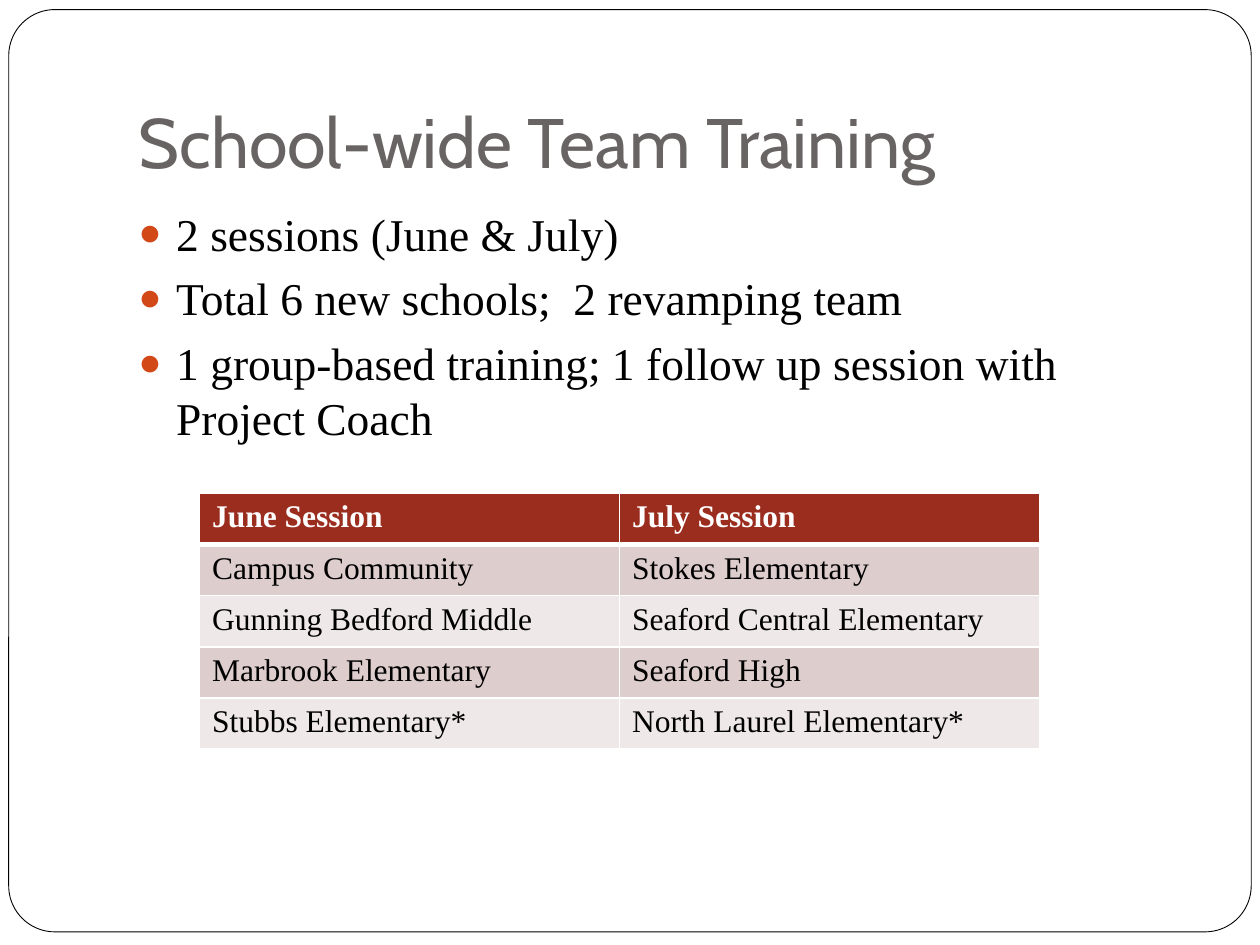
import pptx
import pptx.util
import pptx.dml.color
import pptx.enum.shapes
import pptx.enum.text
import pptx.oxml.ns
from lxml import etree

Pt = pptx.util.Pt
qn = pptx.oxml.ns.qn

BODY_FONT = "Times New Roman"
BULLETS = [
    "2 sessions (June & July)",
    "Total 6 new schools;  2 revamping team",
    "1 group-based training; 1 follow up session with Project Coach",
]
SESSIONS = [
    ("June Session", "July Session"),
    ("Campus Community", "Stokes Elementary"),
    ("Gunning Bedford Middle", "Seaford Central Elementary"),
    ("Marbrook Elementary", "Seaford High"),
    ("Stubbs Elementary*", "North Laurel Elementary*"),
]


def colour(value):
    return pptx.dml.color.RGBColor.from_string(value)


def format_para(para, font, size, ink, bold=False):
    for span in para.runs:
        span.font.name = font
        span.font.size = Pt(size)
        span.font.bold = bold
        span.font.color.rgb = colour(ink)


def place(shape, box):
    shape.left, shape.top, shape.width, shape.height = map(Pt, box)


def add_frame(page, box):
    frame = page.shapes.add_shape(
        pptx.enum.shapes.MSO_SHAPE.ROUNDED_RECTANGLE, *map(Pt, box))
    frame.adjustments[0] = 0.05
    frame.shadow.inherit = False
    frame.fill.solid()
    frame.fill.fore_color.rgb = colour("FFFFFF")
    frame.line.color.rgb = colour("000000")
    frame.line.width = Pt(0.5)
    page.shapes.title._element.addprevious(frame._element)  # behind the title


def set_title(page, box, text):
    title = page.shapes.title
    place(title, box)
    frame = title.text_frame
    frame.text = text
    frame.word_wrap = True
    frame.auto_size = pptx.enum.text.MSO_AUTO_SIZE.NONE
    frame.vertical_anchor = pptx.enum.text.MSO_ANCHOR.BOTTOM
    frame.margin_bottom = Pt(7.2)
    para = frame.paragraphs[0]
    para.alignment = pptx.enum.text.PP_ALIGN.LEFT
    format_para(para, "Cabin", 40, "696464")


def add_bullet(para, indent):
    props = para._p.get_or_add_pPr()
    props.set("marL", str(Pt(indent)))
    props.set("indent", str(-Pt(indent)))
    tint = etree.SubElement(props, qn("a:buClr"))
    etree.SubElement(tint, qn("a:srgbClr"), val="D34817")
    etree.SubElement(props, qn("a:buSzPct"), val="85000")
    etree.SubElement(props, qn("a:buFont"), typeface=BODY_FONT)
    etree.SubElement(props, qn("a:buChar"), char="●")


def add_bullets(page, box, lines):
    frame = page.shapes.add_textbox(*map(Pt, box)).text_frame
    frame.word_wrap = True
    frame.text = "\n".join(lines)
    for para in frame.paragraphs:
        para.space_before = Pt(5.8)
        add_bullet(para, 21.6)
        format_para(para, BODY_FONT, 26, "000000")


def set_borders(cell, bottom):
    props = cell._tc.get_or_add_tcPr()
    for side, width in (("L", 1), ("R", 1), ("T", 1), ("B", bottom)):
        line = etree.SubElement(props, qn(f"a:ln{side}"), w=str(Pt(width)))
        fill = etree.SubElement(line, qn("a:solidFill"))
        etree.SubElement(fill, qn("a:srgbClr"), val="FFFFFF")


def add_sessions(page, box, rows):
    table = page.shapes.add_table(len(rows), len(rows[0]), *map(Pt, box)).table
    for r, row in enumerate(rows):
        header = r == 0
        fill = "9B2D1F" if header else ("EFE8E8", "DECDCD")[r % 2]
        for c, text in enumerate(row):
            cell = table.cell(r, c)
            # The line under the header is shared with the first body row.
            set_borders(cell, 3 if header else 1)
            if r == 1:
                cell._tc.tcPr.find(qn("a:lnT")).set("w", str(Pt(3)))
            cell.fill.solid()
            cell.fill.fore_color.rgb = colour(fill)
            cell.text = text
            format_para(cell.text_frame.paragraphs[0], BODY_FONT, 18,
                        "FFFFFF" if header else "000000", header)


def main():
    deck = pptx.Presentation()
    deck.slide_width, deck.slide_height = Pt(720), Pt(540)
    page = deck.slides.add_slide(deck.slide_layouts.get_by_name("Title Only"))
    add_frame(page, (5, 5.5, 710, 527))
    set_title(page, (72, 21.6, 612, 90), "School-wide Team Training")
    add_bullets(page, (72, 114, 612, 360), BULLETS)
    add_sessions(page, (114, 282, 480, 146), SESSIONS)
    deck.save("out.pptx")


if __name__ == "__main__":
    main()
